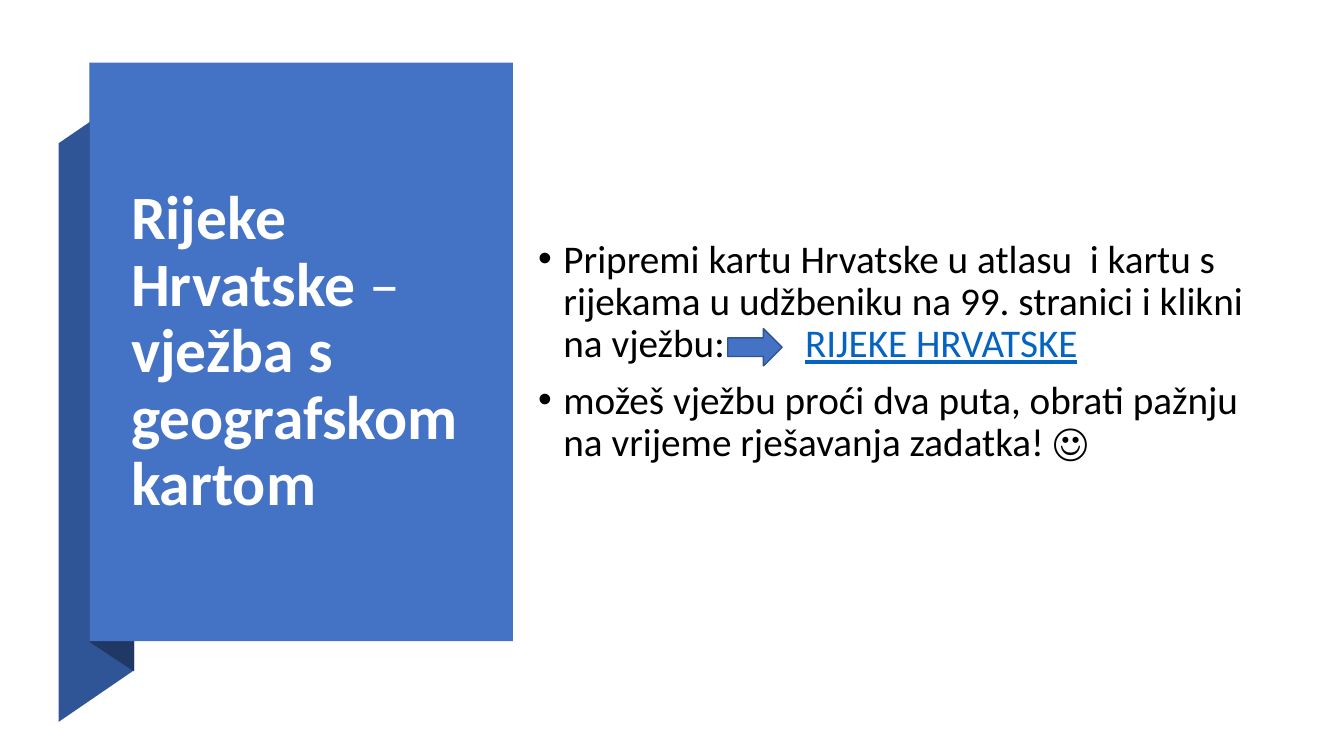
from pptx import Presentation
from pptx.dml.color import RGBColor
from pptx.enum import shapes, text
from pptx.oxml import parse_xml
from pptx.oxml.ns import nsdecls
from pptx.util import Cm, Pt

FONT = "Calibri"
BLUE, WHITE, BLACK, LINK = "4472C4", "FFFFFF", "000000", "0563C1"

TITLE = [
    ("Rijeke Hrvatske ", True),
    ("– ", False),
    ("vježba s geografskom kartom", True),
]
TASKS = [
    [("Pripremi kartu Hrvatske u atlasu  i kartu s rijekama u udžbeniku "
      "na 99. stranici i klikni na vježbu:\t", False),
     ("RIJEKE HRVATSKE", True)],
    [("možeš vježbu proći dva puta, obrati pažnju na vrijeme "
      "rješavanja zadatka! ☺", False)],
]
LINK_TAB = 6.73
INDENT = 0.64

PANEL = (2.26, 1.58, 10.67, 14.58)
TITLE_BOX = (3.05, 2.46, 8.97, 12.85)
TASK_BOX = (13.31, 2.46, 18.64, 12.83)
ARROW = (18.34, 8.28, 1.37, 0.94)
RIBBON = [
    ("2F5597", [(1.48, 18.19), (3.38, 16.89), (3.38, 2.31), (1.48, 3.61)]),
    ("203864", [(2.26, 16.18), (3.38, 16.92), (3.38, 2.29), (2.26, 1.58)]),
]


def color(value):
    return RGBColor.from_string(value)


def lengths(values):
    return [Cm(value) for value in values]


def paint(shape, fill, line=None):
    shape.shadow.inherit = False
    shape.fill.solid()
    shape.fill.fore_color.rgb = color(fill)
    if line:
        shape.line.color.rgb = color(line)
        shape.line.width = Pt(1)
    else:
        shape.line.fill.background()


def set_frame(frame):
    frame.word_wrap = True
    frame.auto_size = text.MSO_AUTO_SIZE.NONE
    frame.vertical_anchor = text.MSO_ANCHOR.MIDDLE


def set_font(paragraph, size, fill):
    paragraph.line_spacing = 0.9
    paragraph.font.name = FONT
    paragraph.font.size = Pt(size)
    paragraph.font.color.rgb = color(fill)


def add_bullet(paragraph):
    properties = paragraph._p.get_or_add_pPr()
    properties.set("marL", str(Cm(INDENT)))
    properties.set("indent", str(-Cm(INDENT)))
    for xml in (
        f'<a:buFont {nsdecls("a")} typeface="Arial"/>',
        f'<a:buChar {nsdecls("a")} char="•"/>',
        f'<a:tabLst {nsdecls("a")}><a:tab pos="{Cm(LINK_TAB)}" algn="l"/></a:tabLst>',
    ):
        properties.append(parse_xml(xml))


def add_title(slide):
    title = slide.shapes.title
    title.left, title.top, title.width, title.height = lengths(TITLE_BOX)
    set_frame(title.text_frame)
    heading = title.text_frame.paragraphs[0]
    heading.alignment = text.PP_ALIGN.LEFT
    set_font(heading, 44, WHITE)
    for words, bold in TITLE:
        part = heading.add_run()
        part.text = words
        part.font.bold = bold
    slide.shapes._spTree.append(title._element)


def add_tasks(slide):
    frame = slide.shapes.add_textbox(*lengths(TASK_BOX)).text_frame
    set_frame(frame)
    for index, parts in enumerate(TASKS):
        task = frame.add_paragraph() if index else frame.paragraphs[0]
        add_bullet(task)
        task.space_before = Pt(10 if index else 0)
        set_font(task, 28, BLACK)
        for words, is_link in parts:
            part = task.add_run()
            part.text = words
            if is_link:
                part.font.color.rgb = color(LINK)
                part.font.underline = True


def main():
    deck = Presentation()
    deck.slide_width, deck.slide_height = Cm(33.87), Cm(19.05)
    slide = deck.slides.add_slide(deck.slide_layouts[5])

    for fill, corners in RIBBON:
        start, *rest = [lengths(corner) for corner in corners]
        outline = slide.shapes.build_freeform(*start)
        outline.add_line_segments(rest, close=True)
        paint(outline.convert_to_shape(), fill)

    panel = slide.shapes.add_shape(shapes.MSO_SHAPE.RECTANGLE, *lengths(PANEL))
    paint(panel, BLUE)
    add_title(slide)
    add_tasks(slide)
    arrow = slide.shapes.add_shape(shapes.MSO_SHAPE.RIGHT_ARROW, *lengths(ARROW))
    paint(arrow, BLUE, "325491")

    deck.save("out.pptx")


if __name__ == "__main__":
    main()
